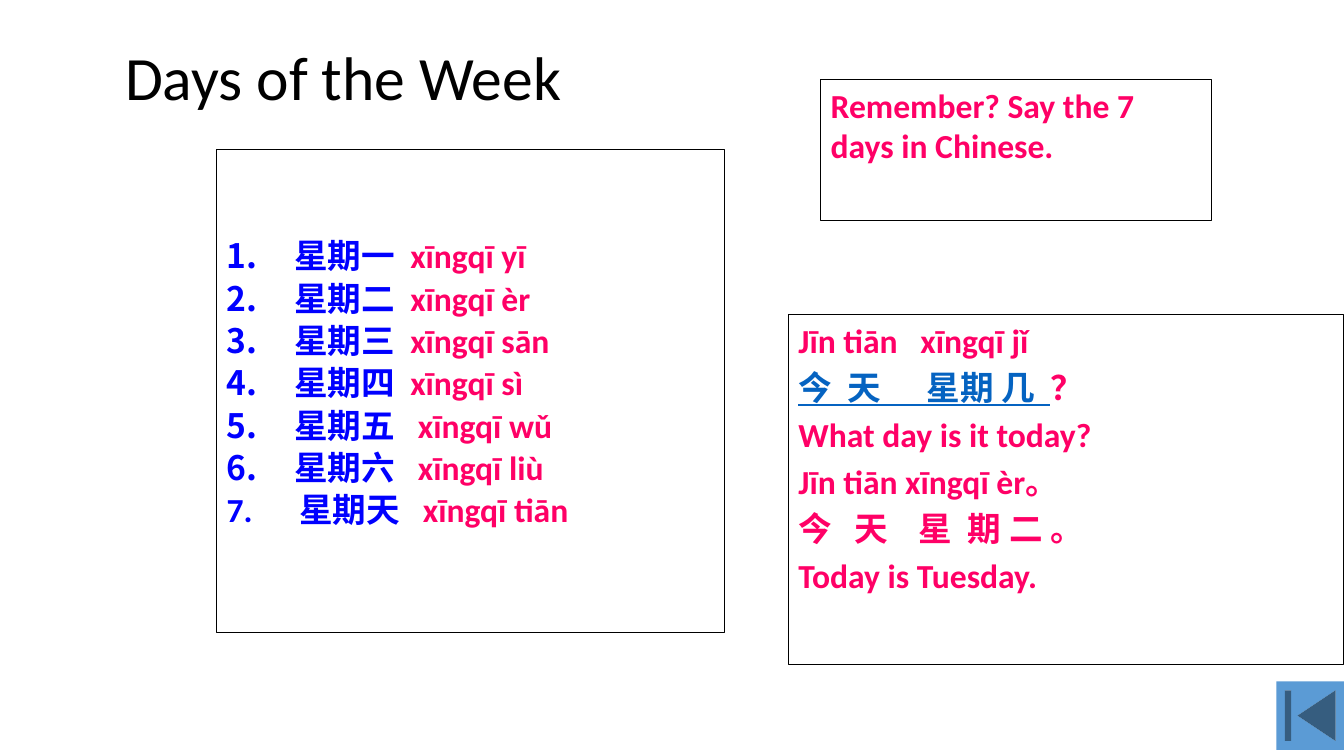
from dataclasses import dataclass

from pptx import Presentation
from pptx import util as u
from pptx.dml.color import RGBColor
from pptx.enum import shapes, text
from pptx.oxml import ns, xmlchemy

BLACK = RGBColor(0x00, 0x00, 0x00)
WHITE = RGBColor(0xFF, 0xFF, 0xFF)
BLUE = RGBColor(0x00, 0x00, 0xFF)
PINK = RGBColor(0xFF, 0x00, 0x66)
LINK_BLUE = RGBColor(0x05, 0x63, 0xC1)
BUTTON_BLUE = RGBColor(0x5B, 0x9B, 0xD5)
FONT = "Calibri"


@dataclass
class Span:
    text: str
    color: RGBColor = PINK
    underline: bool = False


@dataclass
class Panel:
    left: float
    top: float
    width: float
    height: float
    lines: list[list[Span]]
    space_before: float = 4.8
    line_spacing: float = 1.0
    top_inset: float = 0.05


WEEKDAYS = [
    ("星期一  ", "xīngqī yī"),
    ("星期二  ", "xīngqī èr"),
    ("星期三  ", "xīngqī sān"),
    ("星期四  ", "xīngqī sì"),
    ("星期五   ", "xīngqī wǔ"),
    ("星期六   ", "xīngqī liù"),
    ("7.\t星期天   ", "xīngqī tiān"),
]
DAYS = Panel(2.15, 1.48, 5.04, 4.8,
             [[Span(hanzi, BLUE), Span(pinyin)] for hanzi, pinyin in WEEKDAYS],
             space_before=4.3, line_spacing=0.9, top_inset=0.9)
DIALOGUE = Panel(7.82, 3.12, 5.51, 3.47, [
    [Span("Jīn tiān   xīngqī jǐ")],
    [Span("今  天      星期 几  ", LINK_BLUE, True), Span("？")],
    [Span("What day is it today?")],
    [Span("Jīn tiān xīngqī èr。")],
    [Span("今   天    星  期 二 。")],
    [Span("Today is Tuesday.")],
])
REMINDER = Panel(8.14, 0.79, 3.88, 1.4,
                 [[Span("Remember? Say the 7 days in Chinese.")]])


def add_title(slide, title: str) -> None:
    tb = slide.shapes.add_textbox(u.Inches(1), u.Inches(0.36), u.Inches(11.56), u.Inches(0.87))
    tf = tb.text_frame
    tf.word_wrap = True
    tf.vertical_anchor = text.MSO_ANCHOR.MIDDLE
    tf.margin_left = u.Inches(0.24)
    tf.text = title
    p = tf.paragraphs[0]
    p.line_spacing = 0.9
    p.font.name, p.font.size = FONT, u.Pt(44)
    p.font.color.rgb = BLACK


def add_panel(slide, panel: Panel):
    sp = slide.shapes.add_shape(
        shapes.MSO_SHAPE.RECTANGLE, u.Inches(panel.left), u.Inches(panel.top),
        u.Inches(panel.width), u.Inches(panel.height))
    sp.shadow.inherit = False
    sp.fill.solid()
    sp.fill.fore_color.rgb = WHITE
    sp.line.color.rgb = BLACK
    sp.line.width = u.Pt(0.75)
    tf = sp.text_frame
    tf.word_wrap = True
    tf.vertical_anchor = text.MSO_ANCHOR.TOP
    tf.margin_top = u.Inches(panel.top_inset)
    for i, spans in enumerate(panel.lines):
        p = tf.add_paragraph() if i else tf.paragraphs[0]
        p.alignment = text.PP_ALIGN.LEFT
        p.line_spacing = panel.line_spacing
        p.space_before = u.Pt(panel.space_before if i else 0)
        for span in spans:
            r = p.add_run()
            r.text = span.text
            r.font.name, r.font.size, r.font.bold = FONT, u.Pt(24), True
            r.font.color.rgb = span.color
            if span.underline:
                r.font.underline = True
    return sp


def hang(p, indent: float, numbered: bool) -> None:
    """Give a paragraph a hanging indent and, if asked, an automatic number."""
    pPr = p._p.get_or_add_pPr()
    pPr.set("marL", str(u.Inches(indent)))
    pPr.set("indent", str(-u.Inches(indent)))
    if numbered:
        bullet = xmlchemy.OxmlElement("a:buAutoNum")
        bullet.set("type", "arabicPeriod")
        pPr.insert_element_before(bullet, *map(ns.NamespacePrefixedTag, ("a:tabLst", "a:defRPr")))


def add_back_button(slide) -> None:
    sp = slide.shapes.add_shape(
        shapes.MSO_SHAPE.ACTION_BUTTON_BEGINNING,
        u.Inches(12.66), u.Inches(6.76), u.Inches(0.67), u.Inches(0.68))
    sp.shadow.inherit = False
    sp.fill.solid()
    sp.fill.fore_color.rgb = BUTTON_BLUE
    sp.line.fill.background()


def main() -> None:
    prs = Presentation()
    prs.slide_width, prs.slide_height = u.Inches(13.33), u.Inches(7.5)
    s = prs.slides.add_slide(prs.slide_layouts[6])
    add_title(s, "Days of the Week")
    *numbered_days, last_day = add_panel(s, DAYS).text_frame.paragraphs
    for p in numbered_days:
        hang(p, 0.67, numbered=True)
    hang(last_day, 0.72, numbered=False)
    add_panel(s, DIALOGUE)
    add_panel(s, REMINDER)
    add_back_button(s)
    prs.save("out.pptx")


if __name__ == "__main__":
    main()
